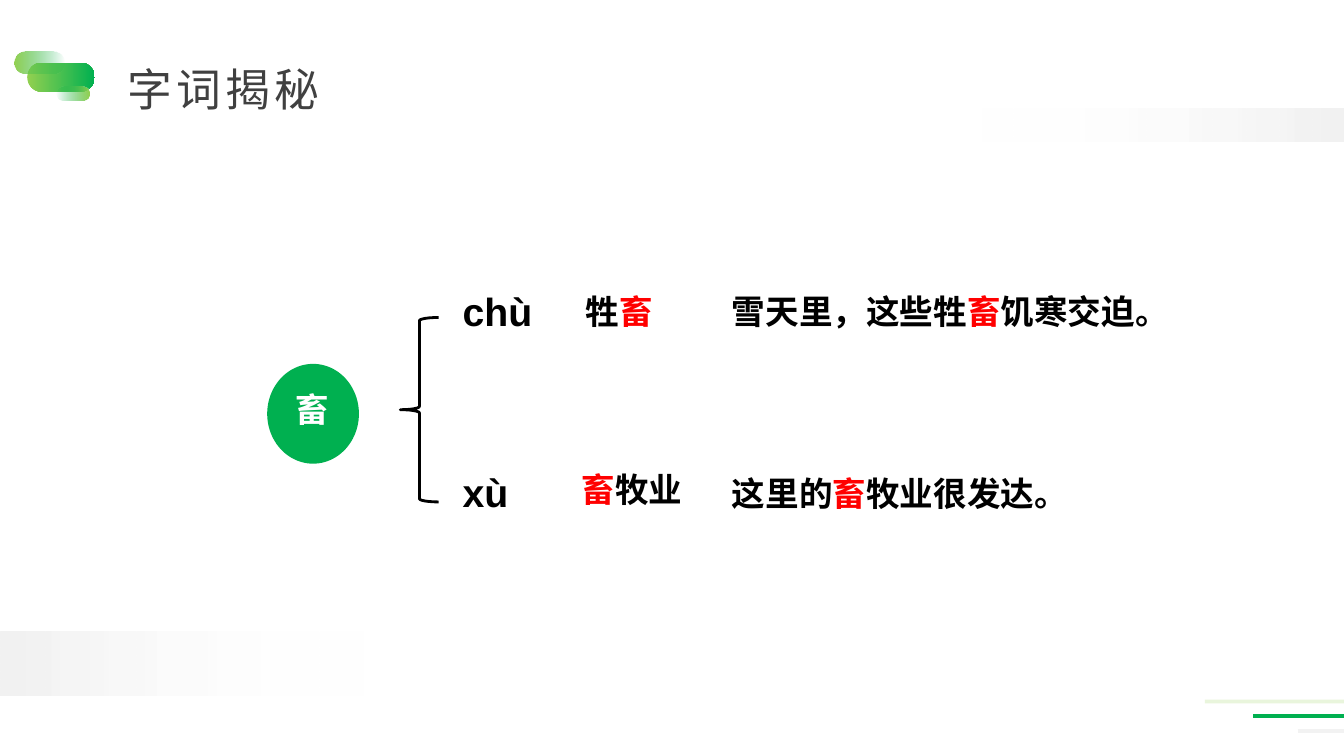
from dataclasses import dataclass

from lxml.etree import SubElement
from pptx import Presentation
from pptx.dml.color import RGBColor
from pptx.enum.shapes import MSO_CONNECTOR, MSO_SHAPE
from pptx.enum.text import MSO_AUTO_SIZE
from pptx.oxml.ns import qn
from pptx.util import Inches, Pt

LIME = RGBColor(0x92, 0xD0, 0x50)
GREEN = RGBColor(0x00, 0xB0, 0x50)
PALE = RGBColor(0xF2, 0xF2, 0xF2)
WHITE = RGBColor(0xFF, 0xFF, 0xFF)
BLACK = RGBColor(0, 0, 0)
GREY = RGBColor(0x40, 0x40, 0x40)
RED = RGBColor(0xFF, 0, 0)
KEY = "畜"
WIDTH = 13.33


@dataclass
class Rule:
    left: float
    top: float
    color: RGBColor
    alpha: int = 100


@dataclass
class Fade:
    kind: MSO_SHAPE
    box: tuple[float, float, float, float]
    start: RGBColor
    end: RGBColor
    clear: bool = True
    flip: bool = False


@dataclass
class Label:
    text: str
    box: tuple[float, float, float, float]
    size: int = 24
    color: RGBColor = BLACK
    mark: RGBColor = RED
    wrap: bool = False
    bold: bool = True
    font: str = "Arial"
    gap: float = 1
    track: int = 0


RULES = [
    Rule(11.95, 6.96, LIME, 20),
    Rule(12.43, 7.1, GREEN),
    Rule(12.87, 7.25, PALE),
]
PILL, BAR = MSO_SHAPE.ROUNDED_RECTANGLE, MSO_SHAPE.RECTANGLE
FADES = [
    Fade(PILL, (0.27, 0.62, 0.67, 0.29), LIME, GREEN, clear=False),
    Fade(PILL, (0.14, 0.51, 0.5, 0.22), LIME, GREEN),
    Fade(PILL, (0.56, 0.86, 0.33, 0.14), LIME, GREEN, flip=True),
    Fade(BAR, (0, 6.27, 3.62, 0.63), PALE, WHITE),
    Fade(BAR, (9.72, 1.08, 3.62, 0.32), PALE, WHITE, flip=True),
]
TITLE = Label("字词揭秘", (1.17, 0.3, 2.78, 0.84), 32, GREY, wrap=True,
              bold=False, font="Lato", gap=1.5, track=300)
LABELS = [
    Label(KEY, (2.83, 3.81, 0.55, 0.5), mark=WHITE),
    Label("chù", (4.49, 2.8, 0.91, 0.57), 28),
    Label("xù", (4.49, 4.6, 0.77, 0.57), 28),
    Label("畜牧业", (5.67, 4.6, 1.24, 0.5)),
    Label("牲畜", (5.71, 2.84, 1.32, 0.5), wrap=True),
    Label("这里的畜牧业很发达。", (7.16, 4.64, 5.55, 0.5), wrap=True),
    Label("雪天里，这些牲畜饥寒交迫。", (7.16, 2.84, 4.69, 0.5)),
]


def set_alpha(node, alpha: int) -> None:
    """Set the opacity, in percent, of the RGB colour inside node."""
    color = next(node.iter(qn("a:srgbClr")))
    SubElement(color, qn("a:alpha")).set("val", str(alpha * 1000))


def add_rule(shapes, rule: Rule) -> None:
    top = Inches(rule.top)
    line = shapes.add_connector(MSO_CONNECTOR.STRAIGHT, Inches(rule.left), top,
                                Inches(WIDTH), top)
    line.line.color.rgb = rule.color
    line.line.width = Pt(2.75)
    if rule.alpha < 100:
        set_alpha(line.line._ln, rule.alpha)
    SubElement(line._element.spPr, qn("a:effectLst"))


def add_plain(shapes, kind: MSO_SHAPE, box: tuple):
    """Add a preset shape without shadow or outline."""
    shape = shapes.add_shape(kind, *map(Inches, box))
    shape.shadow.inherit = False
    shape.line.fill.background()
    return shape


def add_fade(shapes, fade: Fade) -> None:
    shape = add_plain(shapes, fade.kind, fade.box)
    if fade.kind == PILL:
        shape.adjustments[0] = 0.5
    shape.fill.gradient()
    shape.fill.gradient_angle = 0
    stops = shape.fill.gradient_stops
    for stop, color in zip(stops, (fade.start, fade.end)):
        stop.color.rgb = color
    if fade.clear:
        set_alpha(stops[1]._gs, 0)
    if fade.flip:
        shape._element.spPr.xfrm.set("flipH", "1")


def add_label(shapes, label: Label) -> None:
    """Add a text box in which the key character takes the mark colour."""
    frame = shapes.add_textbox(*map(Inches, label.box)).text_frame
    frame.word_wrap = label.wrap
    frame.auto_size = MSO_AUTO_SIZE.SHAPE_TO_FIT_TEXT
    para = frame.paragraphs[0]
    para.line_spacing = label.gap
    para.font.name = label.font
    para.font.size = Pt(label.size)
    para.font.bold = label.bold
    for part in filter(None, label.text.partition(KEY)):
        run = para.add_run()
        run.text = part
        run.font.color.rgb = label.mark if part == KEY else label.color
        if label.track:
            run.font._element.set("spc", str(label.track))


def main() -> None:
    deck = Presentation()
    deck.slide_width, deck.slide_height = Inches(WIDTH), Inches(7.5)
    shapes = deck.slides.add_slide(deck.slide_layouts[6]).shapes
    for rule in RULES:
        add_rule(shapes, rule)
    for fade in FADES:
        add_fade(shapes, fade)
    add_label(shapes, TITLE)

    disc = add_plain(shapes, MSO_SHAPE.OVAL, (2.65, 3.61, 0.91, 0.99))
    disc.fill.solid()
    disc.fill.fore_color.rgb = GREEN
    brace = add_plain(shapes, MSO_SHAPE.LEFT_BRACE, (3.97, 3.15, 0.38, 1.83))
    brace.fill.background()
    brace.line.color.rgb = BLACK
    brace.line.width = Pt(2)
    for label in LABELS:
        add_label(shapes, label)
    deck.save("out.pptx")


if __name__ == "__main__":
    main()
